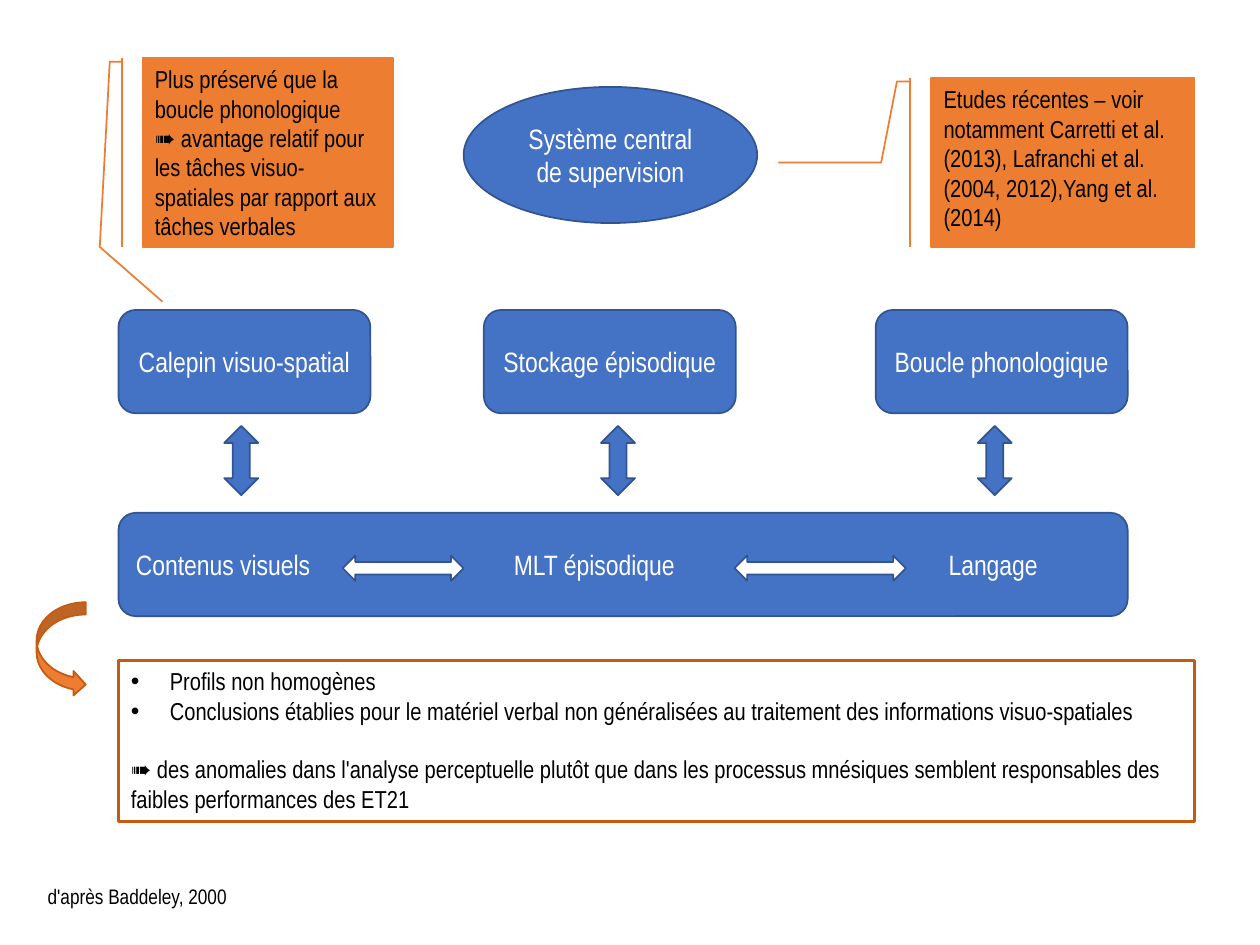
from dataclasses import dataclass

from lxml.etree import SubElement
from pptx import Presentation
from pptx.dml.color import RGBColor
from pptx.enum.shapes import MSO_SHAPE
from pptx.enum.text import MSO_ANCHOR, PP_ALIGN
from pptx.oxml.ns import qn
from pptx.util import Emu, Inches, Pt

FONT = "Arial Narrow"
BLUE, NAVY, ORANGE, RUST = "4472C4", "325491", "ED7D31", "C55A11"
WHITE, BLACK = "FFFFFF", "000000"
COLS, ROWS = 100, 75  # grid of the slide

prs = Presentation()
prs.slide_width, prs.slide_height = Inches(10), Inches(7.5)
s = prs.slides.add_slide(prs.slide_layouts[6])


@dataclass
class Box:
    """A preset shape; col, row, cols and rows are grid units."""
    kind: MSO_SHAPE
    col: float
    row: float
    cols: float
    rows: float
    fill: str | None = BLUE
    line: str = NAVY
    width: float = 1
    text: tuple[str, ...] = ()
    size: int = 16
    color: str = WHITE
    align: PP_ALIGN = PP_ALIGN.CENTER
    anchor: MSO_ANCHOR = MSO_ANCHOR.MIDDLE
    adj: tuple[float, ...] = ()


def rgb(value: str) -> RGBColor:
    return RGBColor.from_string(value)


def place(col: float, row: float, cols: float, rows: float) -> list[Emu]:
    dx, dy = prs.slide_width / COLS, prs.slide_height / ROWS
    return [Emu(round(v)) for v in (col * dx, row * dy, cols * dx, rows * dy)]


def write(tf, lines: tuple[str, ...], size: int, color: str, align: PP_ALIGN) -> None:
    for i, line in enumerate(lines):
        p = tf.paragraphs[0] if i == 0 else tf.add_paragraph()
        p.alignment = align
        r = p.add_run()
        r.text = line
        for name, value in {"name": FONT, "size": Pt(size)}.items():
            setattr(r.font, name, value)
        r.font.color.rgb = rgb(color)


def draw(box: Box):
    sp = s.shapes.add_shape(box.kind, *place(box.col, box.row, box.cols, box.rows))
    sp.shadow.inherit = False
    if box.fill:
        sp.fill.solid()
        sp.fill.fore_color.rgb = rgb(box.fill)
    else:
        sp.fill.background()
    sp.line.color.rgb = rgb(box.line)
    sp.line.width = Pt(box.width)
    for i, value in enumerate(box.adj):
        sp.adjustments[i] = value
    tf = sp.text_frame
    tf.word_wrap = True
    tf.vertical_anchor = box.anchor
    write(tf, box.text, box.size, box.color, box.align)
    return sp


def set_tabs(p, stops: tuple[float, ...]) -> None:
    tabs = SubElement(p._p.get_or_add_pPr(), qn("a:tabLst"))
    for stop in stops:
        SubElement(tabs, qn("a:tab"), pos=str(Inches(stop)), algn="l")


def set_bullet(p, indent: float) -> None:
    pPr = p._p.get_or_add_pPr()
    pPr.set("marL", str(Inches(indent)))
    pPr.set("indent", str(-Inches(indent)))
    SubElement(pPr, qn("a:buFont"), typeface="Arial")
    SubElement(pPr, qn("a:buChar"), char="•")


# Working memory components
LEFT = 9.4
draw(Box(MSO_SHAPE.OVAL, 36.8, 6.9, 23.3, 10.8, text=("Système central de supervision",)))
for col, label in ((LEFT, "Calepin visuo-spatial"), (38.4, "Stockage épisodique"),
                   (69.5, "Boucle phonologique")):
    draw(Box(MSO_SHAPE.ROUNDED_RECTANGLE, col, 24.6, 20, 8.2, text=(label,)))

# Long-term memory band
band = draw(Box(MSO_SHAPE.ROUNDED_RECTANGLE, LEFT, 40.7, 80.1, 8.2, align=PP_ALIGN.LEFT,
                text=("Contenus visuels\tMLT épisodique\tLangage",)))
set_tabs(band.text_frame.paragraphs[0], (3, 6.45))
for i in range(3):
    draw(Box(MSO_SHAPE.UP_DOWN_ARROW, 17.8 + 29.9 * i, 33.8, 2.7, 5.5))
for col, cols in ((27.2, 9.6), (58.3, 13.6)):
    draw(Box(MSO_SHAPE.LEFT_RIGHT_ARROW, col, 44.1, cols, 2, fill=WHITE))

# Callouts
note = dict(size=14, color=BLACK, align=PP_ALIGN.LEFT, anchor=MSO_ANCHOR.TOP)
callout = dict(kind=MSO_SHAPE.LINE_CALLOUT_4_BORDER_AND_ACCENT_BAR,
               fill=ORANGE, line=ORANGE, **note)
BAR = (0.02, -0.08, 0.02, -0.13)
draw(Box(col=11.3, row=4.6, cols=19.9, rows=15, adj=BAR + (1, -0.17, 1.29, 0.08), text=(
    "Plus préservé que la boucle phonologique",
    "➠ avantage relatif pour les tâches visuo-spatiales par rapport aux tâches verbales",
), **callout))
draw(Box(col=73.9, row=6.2, cols=20.9, rows=13.4, adj=BAR + (0.5, -0.19, 0.5, -0.58), text=(
    "Etudes récentes – voir notamment Carretti et al. (2013), "
    "Lafranchi et al. (2004, 2012),Yang et al. (2014)",
), **callout))

# Conclusions
draw(Box(MSO_SHAPE.CURVED_RIGHT_ARROW, 2.9, 47.8, 3.9, 7.5, fill=ORANGE, line=RUST))
summary = draw(Box(MSO_SHAPE.RECTANGLE, LEFT, 52.4, 85.4, 12.8, fill=None, line=RUST, width=1.5, text=(
    "Profils non homogènes",
    "Conclusions établies pour le matériel verbal non généralisées au traitement "
    "des informations visuo-spatiales",
    "➠ des anomalies dans l'analyse perceptuelle plutôt que dans les processus mnésiques "
    "semblent responsables des faibles performances des ET21",
), **note))
*findings, conclusion = summary.text_frame.paragraphs
for p in findings:
    set_bullet(p, 0.31)
conclusion.space_before = Pt(16.5)

# Credit line
credit = s.shapes.add_textbox(*place(2.8, 69.6, 16.4, 3))
credit.text_frame.word_wrap = False
write(credit.text_frame, ("d'après Baddeley, 2000",), 12, BLACK, PP_ALIGN.LEFT)

prs.save("out.pptx")
